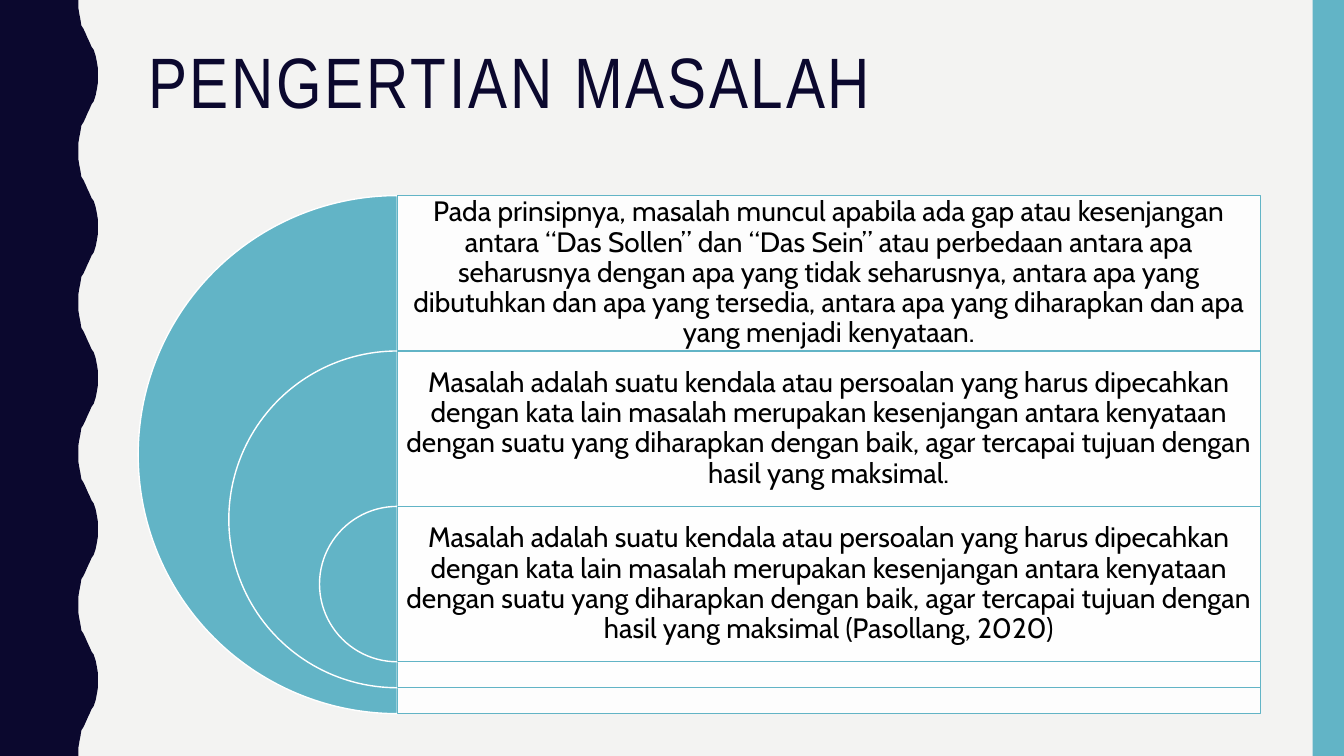
from collections import namedtuple
from dataclasses import dataclass

from lxml.etree import SubElement as Sub
from pptx import Presentation
from pptx.dml.color import RGBColor as Rgb
from pptx.enum.shapes import MSO_SHAPE as Kind
from pptx.enum.text import MSO_ANCHOR as Anchor, PP_ALIGN as Align
from pptx.oxml.ns import qn
from pptx.util import Inches, Pt

Box = namedtuple("Box", "x y w h")
WIDE, HIGH = Inches(13.33), Inches(7.5)
COLS = ROWS = 100
CREST = [  # half a wave: share of swing, share of period
    (0, 0), (0, 0.05), (0.05, 0.09), (0.11, 0.13), (0.16, 0.17),
    (0.26, 0.19), (0.37, 0.22), (0.47, 0.25), (0.58, 0.28), (0.68, 0.31),
    (0.79, 0.33), (0.89, 0.37), (0.95, 0.41), (1, 0.45), (1, 0.5),
]
TITLE = "PENGERTIAN MASALAH"
POINTS = [
    "Pada prinsipnya, masalah muncul apabila ada gap atau kesenjangan antara "
    "“Das Sollen” dan “Das Sein” atau perbedaan antara apa seharusnya dengan "
    "apa yang tidak seharusnya, antara apa yang dibutuhkan dan apa yang "
    "tersedia, antara apa yang diharapkan dan apa yang menjadi kenyataan.",
]
CORE = (
    "Masalah adalah suatu kendala atau persoalan yang harus dipecahkan dengan "
    "kata lain masalah merupakan kesenjangan antara kenyataan dengan suatu "
    "yang diharapkan dengan baik, agar tercapai tujuan dengan hasil yang maksimal"
)
POINTS += [CORE + end for end in (".", " (Pasollang, 2020)")]


@dataclass(frozen=True)
class Theme:
    back: str = "F3F3F2"
    navy: str = "0B082E"
    teal: str = "62B4C6"
    white: str = "FFFFFF"
    black: str = "000000"
    head: str = "Arial Narrow"
    body: str = "Cabin"
    big: int = 51
    small: int = 20
    rule: int = 1


LOOK = Theme()


def grid(x, y, w, h):
    """Turn columns and rows into a box of slide lengths."""
    return Box(*(int(n) for n in (x * WIDE / COLS, y * HIGH / ROWS,
                                  w * WIDE / COLS, h * HIGH / ROWS)))


def style(item, form):
    for name, value in form.items():
        setattr(item, name, value)


def paint(shape, fill, line=None):
    shape.shadow.inherit = False
    shape.fill.solid()
    shape.fill.fore_color.rgb = Rgb.from_string(fill)
    if line:
        shape.line.color.rgb = Rgb.from_string(line)
        shape.line.width = Pt(LOOK.rule)
    else:
        shape.line.fill.background()


def fade(shape, share):
    tint = shape.fill._xPr.find(qn("a:solidFill"))[0]
    Sub(tint, qn("a:alpha"), val=str(share * 1000))


def write(slide, box, text, font, frame, align=Align.LEFT):
    area = slide.shapes.add_textbox(*box).text_frame
    style(area, {"word_wrap": True, **frame})
    para = area.paragraphs[0]
    style(para, {"alignment": align, "line_spacing": 0.9})
    run = para.add_run()
    run.text = text
    color = font.pop("color")
    style(run.font, font)
    run.font.color.rgb = Rgb.from_string(color)
    return run


def wave(slide, box, count=5):
    """Draw the left band with its wavy right edge."""
    base, step = 0.8 * box.w, box.h / count
    cycle = CREST + [(x, 1 - y) for x, y in CREST[-2::-1]]
    edge = [(box.x + base + x * (box.w - base), box.y + (n + y) * step)
            for n in range(count) for x, y in cycle]
    path = slide.shapes.build_freeform(box.x, box.y)
    path.add_line_segments(edge + [(box.x, box.y + box.h)], close=True)
    paint(path.convert_to_shape(), LOOK.navy)


def band(slide, box):
    paint(slide.shapes.add_shape(Kind.RECTANGLE, *box), LOOK.teal)


def title(slide, box):
    font = {"name": LOOK.head, "size": Pt(LOOK.big), "color": LOOK.navy}
    run = write(slide, box, TITLE, font, {"vertical_anchor": Anchor.TOP})
    run.font._element.set("spc", "200")


def rings(slide, box):
    """Nest half discs on the left, each with a panel of text."""
    mid, row = box.x + box.h // 2, int(0.3 * box.h)
    wide = box.x + box.w - mid
    pad = dict.fromkeys(("margin_left", "margin_right",
                         "margin_top", "margin_bottom"), Inches(0.08))
    for n, text in enumerate(POINTS):
        side, top = int((1 - 0.35 * n) * box.h), box.y + n * row
        disc = slide.shapes.add_shape(Kind.PIE, mid - side // 2, top, side, side)
        disc.adjustments[0], disc.adjustments[1] = 54, 162
        paint(disc, LOOK.teal, LOOK.white)
        panel = slide.shapes.add_shape(Kind.RECTANGLE, mid, top, wide, side)
        paint(panel, LOOK.white, LOOK.teal)
        fade(panel, 90)
        font = {"name": LOOK.body, "size": Pt(LOOK.small), "color": LOOK.black}
        write(slide, Box(mid, top, wide, row), text, font,
              {"vertical_anchor": Anchor.MIDDLE, **pad}, Align.CENTER)


def main():
    deck = Presentation()
    style(deck, {"slide_width": WIDE, "slide_height": HIGH})
    slide = deck.slides.add_slide(deck.slide_layouts[6])
    slide.background.fill.solid()
    slide.background.fill.fore_color.rgb = Rgb.from_string(LOOK.back)
    wave(slide, grid(0, 0, 7.28, ROWS))
    band(slide, grid(97.67, 0, 2.33, ROWS))
    title(slide, grid(10.28, 5.6, 83.5, 21.73))
    rings(slide, grid(10.28, 25.87, 83.5, 68.53))
    deck.save("out.pptx")


if __name__ == "__main__":
    main()
